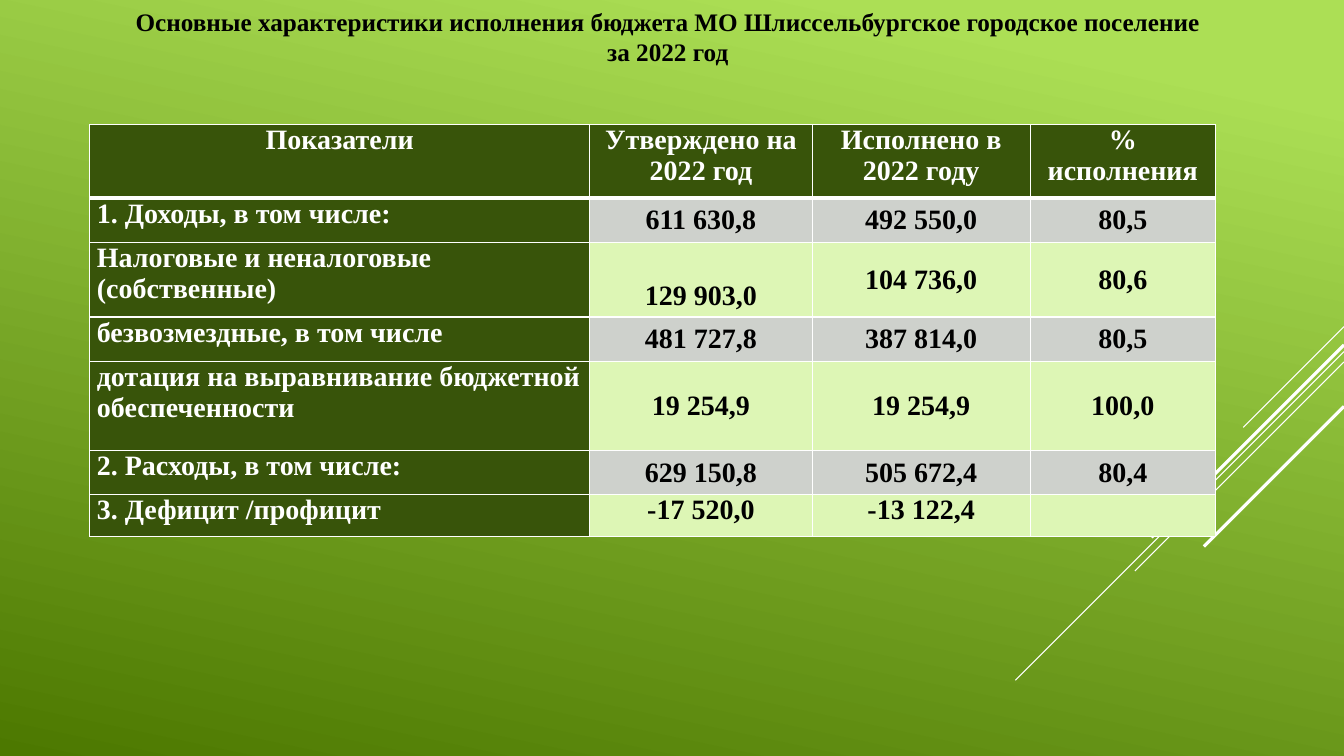
from dataclasses import dataclass

import pptx
import pptx.dml.color
import pptx.enum.shapes
import pptx.enum.text
import pptx.oxml.ns
import pptx.slide
import pptx.table
import pptx.util
from lxml import etree

Cm = pptx.util.Cm
Pt = pptx.util.Pt
RGBColor = pptx.dml.color.RGBColor
Align = pptx.enum.text.PP_ALIGN
Anchor = pptx.enum.text.MSO_ANCHOR
qn = pptx.oxml.ns.qn

WHITE = RGBColor(0xFF, 0xFF, 0xFF)
BLACK = RGBColor(0x00, 0x00, 0x00)
LIGHT_GREEN = RGBColor(0xAC, 0xDF, 0x55)
DEEP_GREEN = RGBColor(0x4C, 0x78, 0x00)
HEADER_GREEN = RGBColor(0x38, 0x54, 0x0A)
BAND_GREY = RGBColor(0xCE, 0xD1, 0xCC)
BAND_GREEN = RGBColor(0xDD, 0xF6, 0xB5)
FONT = "Times New Roman"
SLIDE_W, SLIDE_H = 33.87, 19.05


@dataclass
class Ray:
    top: float
    run: float
    weight: float


@dataclass
class BudgetRow:
    height: float
    texts: tuple[str, str, str, str]
    anchor: Anchor = Anchor.MIDDLE


RAYS = [
    Ray(8.23, 2.54, 0.75),
    Ray(8.86, 8.28, 0.75),
    Ray(9.12, 5.27, 0.75),
    Ray(8.69, 4.85, 2.25),
    Ray(10.24, 3.53, 2.25),
]
TITLE = [
    "Основные характеристики исполнения бюджета МО Шлиссельбургское городское поселение",
    "за 2022 год",
]
COL_WIDTHS = [12.6, 5.61, 5.49, 4.67]
ROWS = [
    BudgetRow(1.85, ("Показатели", "Утверждено на 2022 год", "Исполнено в 2022 году", "% исполнения"), Anchor.TOP),
    BudgetRow(1.12, ("1. Доходы, в том числе:", "611 630,8", "492 550,0", "80,5")),
    BudgetRow(1.88, ("Налоговые и неналоговые (собственные)", "129 903,0", "104 736,0", "80,6")),
    BudgetRow(1.12, ("безвозмездные, в том числе", "481 727,8", "387 814,0", "80,5")),
    BudgetRow(2.24, ("дотация на выравнивание бюджетной обеспеченности", "19 254,9", "19 254,9", "100,0")),
    BudgetRow(1.12, ("2. Расходы, в том числе:", "629 150,8", "505 672,4", "80,4")),
    BudgetRow(1.04, ("3. Дефицит /профицит", "-17 520,0", "-13 122,4", ""), Anchor.TOP),
]
LOWERED_CELL = (2, 1)


def apply(target: object, values: dict) -> None:
    for name, value in values.items():
        setattr(target, name, value)


def write(p: object, text: str, size: float, color: RGBColor, align: Align) -> None:
    p.alignment = align
    r = p.add_run()
    r.text = text
    apply(r.font, {"name": FONT, "size": Pt(size), "bold": True})
    r.font.color.rgb = color


def paint_background(s: pptx.slide.Slide) -> None:
    fill = s.background.fill
    fill.gradient()
    fill.gradient_angle = 258
    for stop, position, color in zip(fill.gradient_stops, (0.1, 1.0), (LIGHT_GREEN, DEEP_GREEN)):
        stop.position = position
        stop.color.rgb = color


def draw_ray(s: pptx.slide.Slide, ray: Ray) -> None:
    cn = s.shapes.add_connector(
        pptx.enum.shapes.MSO_CONNECTOR.STRAIGHT,
        Cm(SLIDE_W), Cm(ray.top), Cm(SLIDE_W - ray.run), Cm(ray.top + ray.run),
    )
    cn.line.color.rgb = WHITE
    cn.line.width = Pt(ray.weight)
    etree.SubElement(cn._element.spPr, qn("a:effectLst"))


def fill_title(s: pptx.slide.Slide) -> None:
    sp = s.shapes.title
    apply(sp, {"left": Cm(2.06), "top": Cm(0.03), "width": Cm(29.54), "height": Cm(1.8)})
    tf = sp.text_frame
    apply(tf, {
        "word_wrap": True,
        "auto_size": pptx.enum.text.MSO_AUTO_SIZE.SHAPE_TO_FIT_TEXT,
        "vertical_anchor": Anchor.TOP,
    })
    for i, text in enumerate(TITLE):
        p = tf.paragraphs[0] if i == 0 else tf.add_paragraph()
        write(p, text, 18, BLACK, Align.CENTER)


def set_borders(cell: pptx.table._Cell, weights: dict[str, float]) -> None:
    tc_pr = cell._tc.get_or_add_tcPr()
    for side, weight in weights.items():
        ln = etree.SubElement(tc_pr, qn(f"a:ln{side}"), w=str(Pt(weight)))
        solid = etree.SubElement(ln, qn("a:solidFill"))
        etree.SubElement(solid, qn("a:srgbClr"), val=str(WHITE))


def fill_cell(cell: pptx.table._Cell, row: int, col: int) -> None:
    dark = row == 0 or col == 0
    set_borders(cell, {"L": 1, "R": 1, "T": 3 if row == 1 else 1, "B": 3 if row == 0 else 1})
    cell.fill.solid()
    cell.fill.fore_color.rgb = HEADER_GREEN if dark else (BAND_GREEN, BAND_GREY)[row % 2]
    apply(cell, {
        "margin_left": Cm(0.18),
        "margin_right": Cm(0.18),
        "margin_top": Cm(0.81 if (row, col) == LOWERED_CELL else 0),
        "margin_bottom": Cm(0),
        "vertical_anchor": Anchor.TOP if col == 0 else ROWS[row].anchor,
    })
    text = ROWS[row].texts[col]
    if text:
        align = Align.LEFT if col == 0 and row > 0 else Align.CENTER
        write(cell.text_frame.paragraphs[0], text, 20, WHITE if dark else BLACK, align)


def draw_table(s: pptx.slide.Slide) -> None:
    frame = s.shapes.add_table(
        len(ROWS), len(COL_WIDTHS), Cm(2.26), Cm(3.14),
        Cm(sum(COL_WIDTHS)), Cm(sum(row.height for row in ROWS)),
    )
    table = frame.table
    for column, width in zip(table.columns, COL_WIDTHS):
        column.width = Cm(width)
    for i, row in enumerate(ROWS):
        table.rows[i].height = Cm(row.height)
        for j in range(len(COL_WIDTHS)):
            fill_cell(table.cell(i, j), i, j)


def main() -> None:
    prs = pptx.Presentation()
    apply(prs, {"slide_width": Cm(SLIDE_W), "slide_height": Cm(SLIDE_H)})
    s = prs.slides.add_slide(prs.slide_layouts[5])
    paint_background(s)
    for ray in RAYS:
        draw_ray(s, ray)
    fill_title(s)
    draw_table(s)
    prs.save("out.pptx")


if __name__ == "__main__":
    main()
